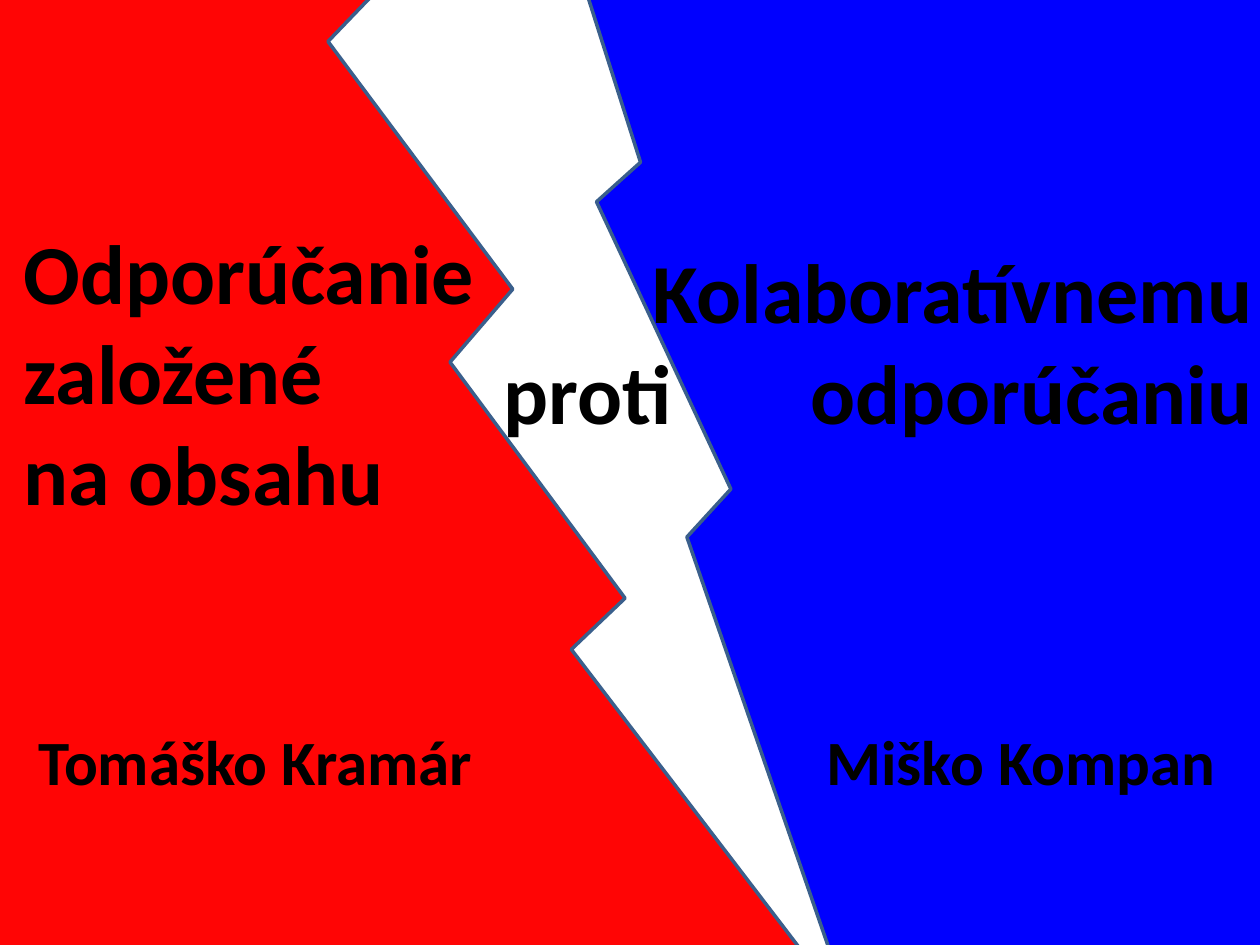
from dataclasses import dataclass

from lxml import etree
from pptx import Presentation
from pptx.dml.color import RGBColor
from pptx.enum.shapes import MSO_SHAPE
from pptx.enum.text import MSO_ANCHOR, PP_ALIGN
from pptx.oxml.ns import qn
from pptx.util import Pt

PX = 914400 // 126
BOLT = MSO_SHAPE.LIGHTNING_BOLT
LEFT, RIGHT = PP_ALIGN.LEFT, PP_ALIGN.RIGHT
TOP, MIDDLE = MSO_ANCHOR.TOP, MSO_ANCHOR.MIDDLE


@dataclass(frozen=True)
class Theme:
    font: str = "Calibri"
    title: int = 48
    names: int = 36
    text: str = "000000"
    red: str = "FF0505"
    blue: str = "0000FF"
    blue_line: str = "4B7EBC"
    bolt: str = "FFFFFF"
    bolt_line: str = "3A5F8C"


THEME = Theme()
SLIDE = (1260, 945)

# The left edge of the blue side runs hidden beneath the bolt.
BLUE_SIDE = [(508, -44), (561, 176), (655, 554), (713, 693), (825, 987),
             (1412, 987), (1412, -44)]
BOLT_BOX = (328, -173, 525, 1191)

NAMES = ["Tomáško Kramár\tMiško Kompan"]
NAMES_BOX, NAMES_TAB = (26, 716, 1211, 90), 788
RIGHT_TITLE = ["Kolaboratívnemu odporúčaniu"]
RIGHT_BOX = (591, 185, 674, 311)
LEFT_TITLE = ["Odporúčanie", "založené", "na obsahu"]
LEFT_BOX = (11, 214, 500, 318)
VERSUS = ["proti"]
VERSUS_BOX = (491, 334, 195, 115)


def emu(lengths):
    return [n * PX for n in lengths]


def rgb(code):
    return RGBColor.from_string(code)


def paint(sp, fill, line, width):
    sp.shadow.inherit = False
    sp.fill.solid()
    sp.fill.fore_color.rgb = rgb(fill)
    sp.line.color.rgb = rgb(line)
    sp.line.width = Pt(width)


def add_text(slide, box, lines, size=THEME.title, align=LEFT, anchor=TOP,
             wrap=False, tab=None):
    """Add bold lines of text; tab is the place of a left tab stop in px."""
    tf = slide.shapes.add_textbox(*emu(box)).text_frame
    tf.word_wrap = wrap
    tf.vertical_anchor = anchor
    for i, line in enumerate(lines):
        p = tf.add_paragraph() if i else tf.paragraphs[0]
        p.alignment = align
        if tab:
            stops = etree.SubElement(p._p.get_or_add_pPr(), qn("a:tabLst"))
            etree.SubElement(stops, qn("a:tab"), pos=str(tab * PX), algn="l")
        r = p.add_run()
        r.text = line
        r.font.name = THEME.font
        r.font.size = Pt(size)
        r.font.bold = True
        r.font.color.rgb = rgb(THEME.text)


def main():
    prs = Presentation()
    prs.slide_width, prs.slide_height = emu(SLIDE)
    slide = prs.slides.add_slide(prs.slide_layouts[6])
    slide.background.fill.solid()
    slide.background.fill.fore_color.rgb = rgb(THEME.red)

    outline = slide.shapes.build_freeform(*BLUE_SIDE[0], scale=PX)
    outline.add_line_segments(BLUE_SIDE[1:], close=True)
    paint(outline.convert_to_shape(), THEME.blue, THEME.blue_line, 0.75)
    bolt = slide.shapes.add_shape(BOLT, *emu(BOLT_BOX))
    paint(bolt, THEME.bolt, THEME.bolt_line, 2)

    add_text(slide, NAMES_BOX, NAMES, size=THEME.names, wrap=True, tab=NAMES_TAB)
    add_text(slide, RIGHT_BOX, RIGHT_TITLE, align=RIGHT, anchor=MIDDLE, wrap=True)
    add_text(slide, LEFT_BOX, LEFT_TITLE)
    add_text(slide, VERSUS_BOX, VERSUS)
    prs.save("out.pptx")


if __name__ == "__main__":
    main()
